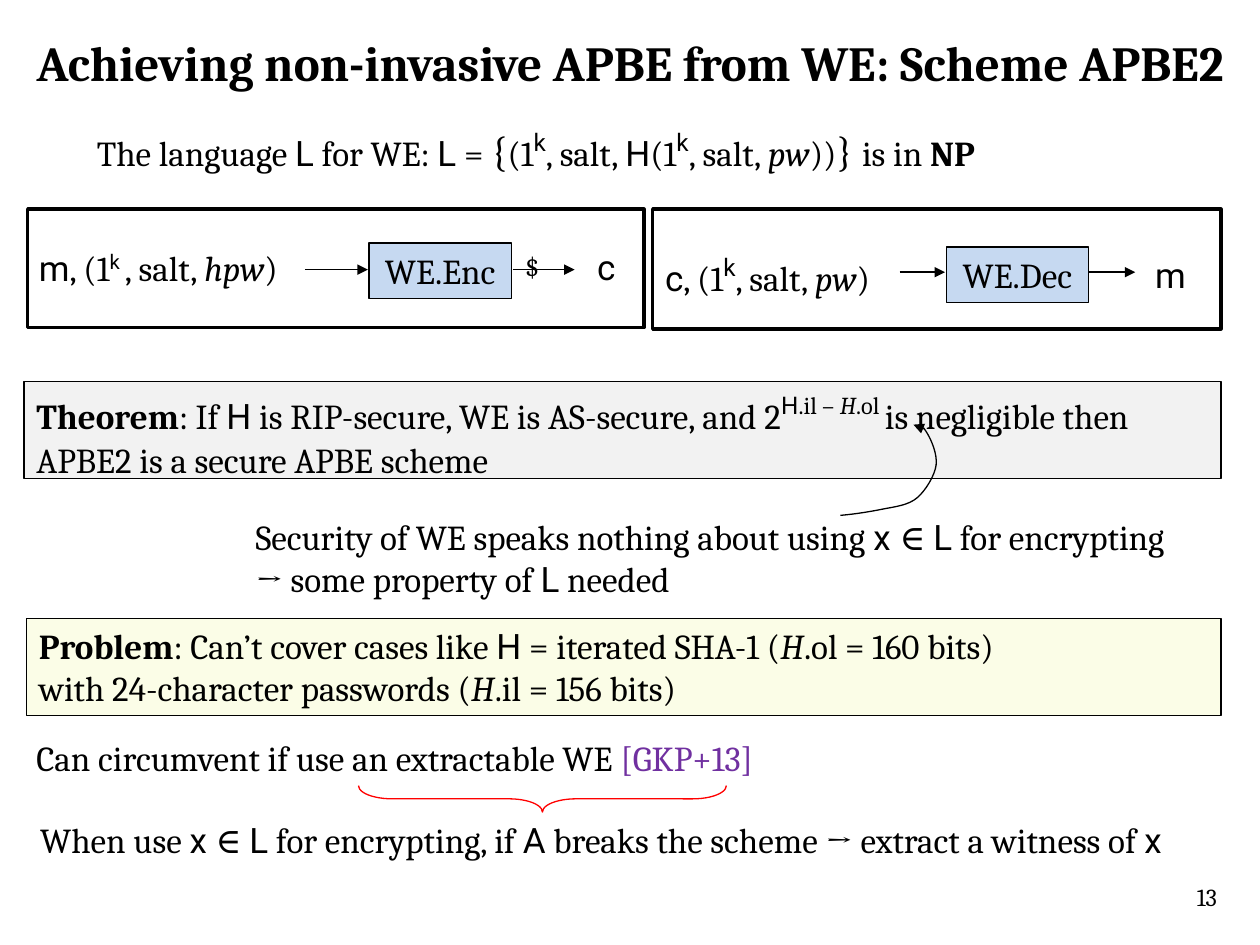
from lxml.etree import SubElement
from pptx import Presentation
from pptx.dml.color import RGBColor
from pptx.enum.shapes import MSO_CONNECTOR, MSO_SHAPE
from pptx.enum.text import MSO_ANCHOR, MSO_AUTO_SIZE, PP_ALIGN
from pptx.oxml.ns import qn
from pptx.util import Inches, Pt

BLACK, WHITE, RED = "000000", "FFFFFF", "FF0000"
GREY, BLUE, CREAM = "F2F2F2", "C6D9F1", "FBFDE7"

# Each style lists only what differs from the regular text
REGULAR = {"name": "Cambria", "size": Pt(20), "bold": False, "italic": False}
STYLES = {
    "": {},
    "bold": {"bold": True},
    "italic": {"italic": True},
    "sans": {"name": "Roboto"},
    "big": {"size": Pt(24)},
    "title": {"size": Pt(28), "bold": True},
    "small": {"size": Pt(16)},
    "number": {"size": Pt(14)},
    "cite": {},
    "sup": {"size": Pt(24)},
    "sup italic": {"size": Pt(24), "italic": True},
    "sup sans": {"size": Pt(24), "name": "Roboto"},
    "low sup sans": {"name": "Roboto"},
}
STYLE_COLOURS = {"cite": "7030A0"}
SUPER_K = ("k", "sup sans")


def colour(value):
    return RGBColor.from_string(value)


def write(shape, paragraphs, align=PP_ALIGN.LEFT, wrap=True):
    """Fill a shape with paragraphs, each a list of (text, style) spans."""
    frame = shape.text_frame
    frame.word_wrap = wrap
    frame.auto_size = MSO_AUTO_SIZE.NONE
    frame.vertical_anchor = MSO_ANCHOR.TOP
    for index, spans in enumerate(paragraphs):
        para = frame.add_paragraph() if index else frame.paragraphs[0]
        para.alignment = align
        for text, style in spans:
            span = para.add_run()
            span.text = text
            for key, value in {**REGULAR, **STYLES[style]}.items():
                setattr(span.font, key, value)
            span.font.color.rgb = colour(STYLE_COLOURS.get(style, BLACK))
            if "sup" in style:
                span.font._element.set("baseline", "36000")


def add_text(page, place, *paragraphs):
    box = page.shapes.add_textbox(*map(Inches, place))
    write(box, paragraphs)


def outline(shape, line, width=0.75):
    shape.line.color.rgb = colour(line)
    shape.line.width = Pt(width)


def add_box(page, place, fill, *paragraphs, width=0.75, align=PP_ALIGN.LEFT):
    box = page.shapes.add_shape(MSO_SHAPE.RECTANGLE, *map(Inches, place))
    box.shadow.inherit = False
    box.fill.solid()
    box.fill.fore_color.rgb = colour(fill)
    outline(box, BLACK, width)
    write(box, paragraphs, align)


def add_arrowhead(shape):
    SubElement(shape.line._get_or_add_ln(), qn("a:tailEnd"), type="triangle")


def add_arrow(page, start, end, y):
    arrow = page.shapes.add_connector(
        MSO_CONNECTOR.STRAIGHT, Inches(start), Inches(y), Inches(end), Inches(y))
    outline(arrow, BLACK)
    add_arrowhead(arrow)
    SubElement(arrow._element.spPr, qn("a:effectLst"))


def add_curved_arrow(page, points):
    """Draw a Bezier arrow: a start point, then three points per segment."""
    start, *rest = [(Inches(x), Inches(y)) for x, y in points]
    builder = page.shapes.build_freeform(*start)
    builder.add_line_segments(rest, close=False)
    curve = builder.convert_to_shape()
    curve.shadow.inherit = False
    curve.fill.background()
    outline(curve, BLACK)
    add_arrowhead(curve)
    # Join each three straight steps into one cubic segment
    route = curve._element.find(".//" + qn("a:pathLst"))[0]
    steps = route.findall(qn("a:lnTo"))
    for first in range(0, len(steps), 3):
        cubic = SubElement(route, qn("a:cubicBezTo"))
        for step in steps[first:first + 3]:
            cubic.append(step[0])
            route.remove(step)


def add_brace(page, place):
    brace = page.shapes.add_shape(MSO_SHAPE.RIGHT_BRACE, *map(Inches, place))
    brace.shadow.inherit = False
    brace.rotation = 90
    brace.adjustments[0], brace.adjustments[1] = 1.27, 0.5
    brace.fill.background()
    outline(brace, RED)


def add_title(page, text):
    title = page.shapes.title
    title.left, title.top, title.width, title.height = map(
        Inches, (0.19, 0.21, 9.94, 0.57))
    write(title, [[(text, "title")]], wrap=False)


def add_algorithm(page, name, left, top, arrows, arrow_y):
    """A labelled algorithm box with an arrow on each side."""
    add_box(page, (left, top, 1.13, 0.44), BLUE, [(name, "")], align=PP_ALIGN.CENTER)
    for start, end in arrows:
        add_arrow(page, start, end, arrow_y)


def main():
    deck = Presentation()
    deck.slide_width, deck.slide_height = Inches(10), Inches(7.5)
    page = deck.slides.add_slide(deck.slide_layouts[5])

    # Heading and slide number
    add_title(page, "Achieving non-invasive APBE from WE: Scheme APBE2")
    add_text(page, (9.4, 6.95, 0.91, 0.4), [("13", "number")])

    # Theorem and the remark pointing at it
    add_box(page, (0.19, 3.03, 9.5, 0.77), GREY, [
        ("Theorem", "bold"), (": If ", ""), ("H", "sans"),
        (" is RIP-secure, WE is AS-secure, and 2", ""), ("H", "sup sans"),
        (".il – ", "sup"), ("H", "sup italic"), (".ol ", "sup"),
        ("is negligible then APBE2 is a secure APBE scheme", "")])
    add_text(page, (1.93, 4.04, 8.06, 0.77), [
        ("Security of WE speaks nothing about using ", ""), ("x ", "sans"),
        ("∈ ", ""), ("L", "sans"), (" for encrypting", "")], [
        ("→ some property of ", ""), ("L", "sans"), (" needed", "")])
    add_curved_arrow(page, [
        (6.67, 4.09), (6.79, 4.08), (6.91, 4.06), (7.01, 4.04),
        (7.11, 4.02), (7.21, 4.01), (7.28, 3.95),
        (7.35, 3.89), (7.42, 3.77), (7.43, 3.69),
        (7.44, 3.6), (7.39, 3.49), (7.36, 3.44),
        (7.33, 3.39), (7.29, 3.38), (7.25, 3.37)])

    # Language definition
    add_text(page, (0.67, 0.94, 8.93, 0.5), [
        ("The language ", ""), ("L", "sans"), (" for WE: ", ""), ("L", "sans"),
        (" = ", ""), ("{", "big"), ("(1", ""), SUPER_K, (", salt, ", ""),
        ("H", "sans"), ("(1", ""), SUPER_K, (", salt, ", ""), ("pw", "italic"),
        ("))", ""), ("} ", "big"), ("is in ", ""), ("NP", "bold")])

    # Panels for decryption and encryption
    add_box(page, (5.18, 1.66, 4.51, 0.95), WHITE, width=2)
    add_box(page, (0.22, 1.66, 4.89, 0.94), WHITE, width=2)

    # Encryption
    add_algorithm(page, "WE.Enc", 2.93, 1.93, [(2.42, 2.92), (4.07, 4.56)], 2.14)
    add_text(page, (0.21, 1.91, 2.31, 0.44), [
        ("m", "sans"), (", (1", ""), ("k ", "low sup sans"), (", salt, ", ""),
        ("hpw", "italic"), (")", "")])
    add_text(page, (4.64, 1.9, 0.46, 0.44), [("c", "sans")])
    add_text(page, (4.07, 1.93, 0.22, 0.37), [("$", "small")])

    # Decryption
    add_algorithm(page, "WE.Dec", 7.51, 1.96, [(7.14, 7.5), (8.64, 9.01)], 2.16)
    add_text(page, (5.18, 1.93, 1.96, 0.44), [
        ("c", "sans"), (", (1", ""), SUPER_K, (", salt, ", ""),
        ("pw", "italic"), (")", "")])
    add_text(page, (9.07, 1.96, 0.46, 0.44), [("m", "sans")])

    # Problem and the way around it
    add_box(page, (0.21, 4.91, 9.48, 0.77), CREAM, [
        ("Problem", "bold"), (": Can’t cover cases like ", ""), ("H", "sans"),
        (" = iterated SHA-1 (", ""), ("H", "italic"), (".ol = 160 bits)", "")], [
        ("with 24-character passwords (", ""), ("H", "italic"),
        (".il = 156 bits)", "")])
    add_text(page, (0.19, 5.8, 9.6, 0.44), [
        ("Can circumvent if use an extractable WE ", ""), ("[GKP+13]", "cite")])
    add_text(page, (0.22, 6.45, 9.78, 0.44), [
        ("When use ", ""), ("x ", "sans"), ("∈ ", ""), ("L", "sans"),
        (" for encrypting, if ", ""), ("A", "sans"),
        (" breaks the scheme → extract a witness of ", ""), ("x", "sans")])
    add_brace(page, (4.2, 4.88, 0.21, 2.92))

    deck.save("out.pptx")


if __name__ == "__main__":
    main()
